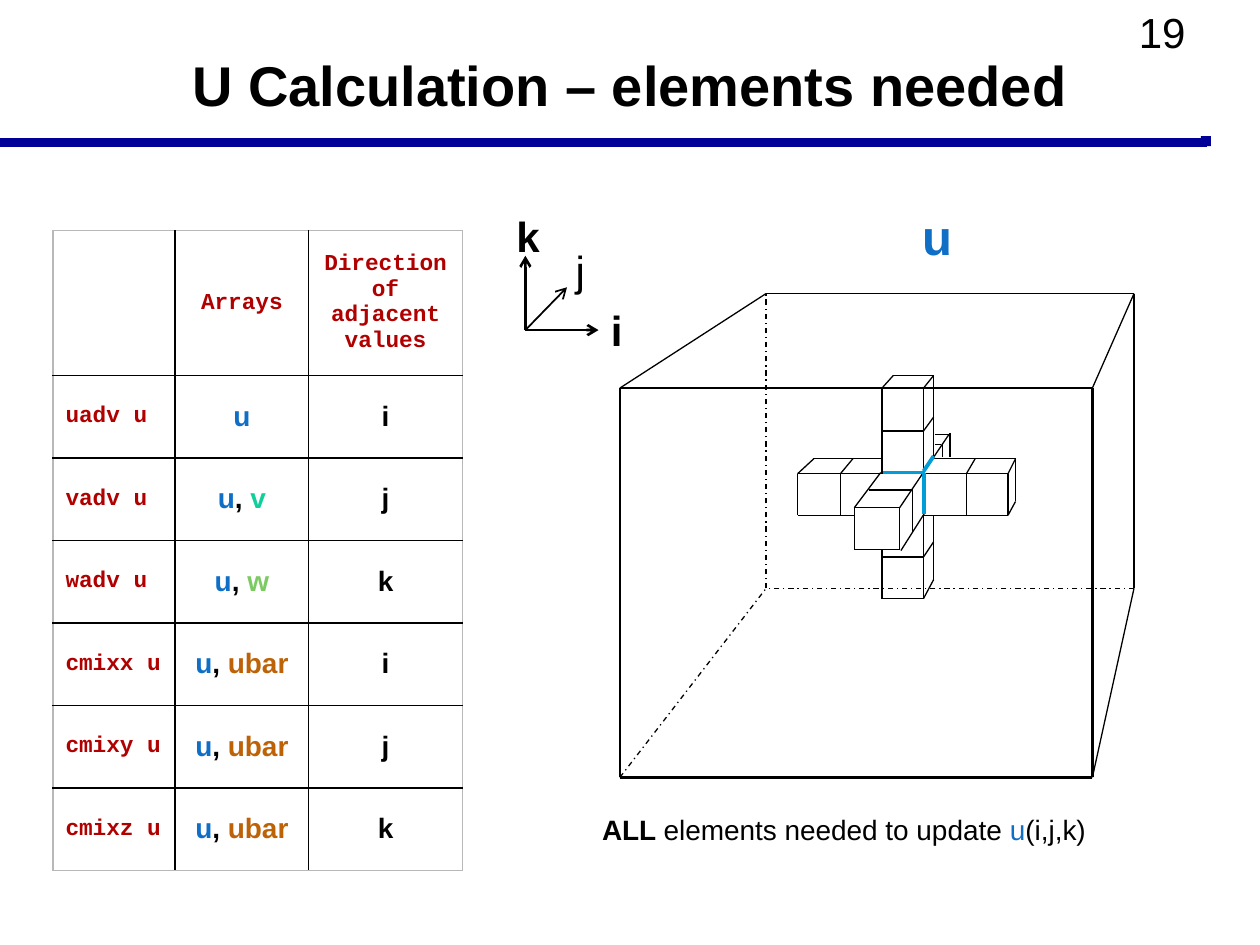
import pptx
import pptx.util
import pptx.dml.color
import pptx.enum.dml
import pptx.enum.shapes
import pptx.enum.text
from lxml import etree
from pptx.oxml.ns import qn

Inches, Pt = pptx.util.Inches, pptx.util.Pt
RGBColor = pptx.dml.color.RGBColor
ALIGN, ANCHOR = pptx.enum.text.PP_ALIGN, pptx.enum.text.MSO_ANCHOR

BLACK = RGBColor(0x00, 0x00, 0x00)
GREY = RGBColor(0xB8, 0xB8, 0xB8)
NAVY = RGBColor(0x00, 0x00, 0x99)
RED = RGBColor(0xB0, 0x00, 0x00)
BLUE = RGBColor(0x0F, 0x6F, 0xC6)
CYAN = RGBColor(0x00, 0x9D, 0xD9)
TEAL = RGBColor(0x10, 0xCF, 0x9B)
GREEN = RGBColor(0x7C, 0xCA, 0x62)
BROWN = RGBColor(0xBD, 0x62, 0x07)

U, COMMA, UBAR = ("u", BLUE), (", ", BLACK), ("ubar", BROWN)
TABLE_ROWS = [
    ("uadv u", [U], "i"),
    ("vadv u", [U, COMMA, ("v", TEAL)], "j"),
    ("wadv u", [U, COMMA, ("w", GREEN)], "k"),
    ("cmixx u", [U, COMMA, UBAR], "i"),
    ("cmixy u", [U, COMMA, UBAR], "j"),
    ("cmixz u", [U, COMMA, UBAR], "k"),
]


def add_line(shapes, left, top, segment, width=0.75, color=BLACK, dashed=False, arrow=False):
    """Draw segment (x1, y1, x2, y2), measured from left, top."""
    x1, y1, x2, y2 = segment
    line = shapes.add_connector(pptx.enum.shapes.MSO_CONNECTOR.STRAIGHT,
                                Inches(left + x1), Inches(top + y1),
                                Inches(left + x2), Inches(top + y2))
    line.line.color.rgb = color
    line.line.width = Pt(width)
    if dashed:
        line.line.dash_style = pptx.enum.dml.MSO_LINE.DASH_DOT
    if arrow:
        etree.SubElement(line.line._get_or_add_ln(), qn("a:tailEnd"), type="arrow")
    etree.SubElement(line._element.spPr, qn("a:effectLst"))


def add_runs(p, runs, size, font="Arial", bold=None):
    p.font.size, p.font.name, p.font.bold = Pt(size), font, bold
    for text, color in runs:
        r = p.add_run()
        r.text = text
        r.font.color.rgb = color


def add_text(shapes, left, top, width, height, runs, size, bold=None):
    box = shapes.add_textbox(Inches(left), Inches(top), Inches(width), Inches(height))
    box.text_frame.word_wrap = True
    p = box.text_frame.paragraphs[0]
    add_runs(p, runs, size, bold=bold)
    return p


def add_heading(s, left, top, width, height):
    """Title with the rule below it and the page number above."""
    title = s.shapes.title
    title.left, title.top = Inches(left + 0.5), Inches(top + 0.08)
    title.width, title.height = Inches(width - 1), Inches(height - 0.08)
    title.text_frame.vertical_anchor = ANCHOR.MIDDLE
    p = title.text_frame.paragraphs[0]
    p.alignment = ALIGN.CENTER
    add_runs(p, [("U Calculation – elements needed", BLACK)], 32, bold=True)

    rule = s.shapes.add_group_shape().shapes
    add_line(rule, left, top, (0, 1.13, 9.58, 1.13), 5, NAVY)
    end = rule.add_shape(pptx.enum.shapes.MSO_SHAPE.RECTANGLE, Inches(left + 9.53),
                         Inches(top + 1.08), Inches(0.08), Inches(0.08))
    end.shadow.inherit = False
    end.fill.solid()
    end.fill.fore_color.rgb = NAVY
    end.line.fill.background()
    add_text(s.shapes, left + 8.94, top, 0.83, 0.4, [("19", BLACK)], 24)


def set_border(cell, side, color):
    ln = etree.SubElement(cell._tc.get_or_add_tcPr(), qn("a:" + side), w=str(Pt(1)))
    fill = etree.SubElement(ln, qn("a:solidFill"))
    etree.SubElement(fill, qn("a:srgbClr"), val=str(color))


def add_arrays_table(s, left, top, width, height):
    n_rows, n_cols = len(TABLE_ROWS) + 1, 3
    table = s.shapes.add_table(n_rows, n_cols, Inches(left), Inches(top),
                               Inches(width), Inches(height)).table
    table.horz_banding = table.first_row = False
    for col, share in zip(table.columns, (0.97, 1.06, 1.22)):
        col.width = Inches(width * share / 3.25)
    header = 1.15
    for i, row in enumerate(table.rows):
        row.height = Inches(header if i == 0 else (height - header) / (n_rows - 1))

    code = (13, "Courier New", True)
    body = (16, "Arial", True)
    grid = [[None, ([("Arrays", RED)], code), ([("Direction of adjacent values", RED)], code)]]
    for name, arrays, direction in TABLE_ROWS:
        grid.append([([(name, RED)], code), (arrays, body), ([(direction, BLACK)], body)])

    for i, row in enumerate(grid):
        for j, content in enumerate(row):
            cell = table.cell(i, j)
            cell.vertical_anchor = ANCHOR.MIDDLE
            outer = {"lnL": j == 0, "lnR": j == n_cols - 1,
                     "lnT": i == 0, "lnB": i == n_rows - 1}
            for side, is_outer in outer.items():
                set_border(cell, side, GREY if is_outer else BLACK)
            cell.fill.background()
            if content:
                runs, style = content
                p = cell.text_frame.paragraphs[0]
                p.alignment = ALIGN.LEFT if j == 0 else ALIGN.CENTER
                add_runs(p, runs, *style)


def add_axes(s, left, top):
    shapes = s.shapes.add_group_shape().shapes
    for dx, dy, width in [(0.58, 0, 1.5), (0.33, -0.34, 1), (0, -0.59, 1.5)]:
        add_line(shapes, left, top, (0.17, 1, 0.17 + dx, 1 + dy), width, arrow=True)
    for name, x, y, bold in [("i", 0.75, 0.75, True), ("j", 0.47, 0.27, None), ("k", 0, 0, True)]:
        add_text(shapes, left + x, top + y, 0.42, 0.51, [(name, BLACK)], 24, bold)


def add_domain(s, left, top, width, height):
    """Wire frame of the whole array, with hidden edges dashed."""
    front = [(0, 0.75), (width - 0.33, 0.75), (width - 0.33, height), (0, height)]
    back = [(1.16, 0), (width, 0), (width, 2.34), (1.16, 2.34)]
    hidden = back[3]
    edges = [(front[i], front[(i + 1) % 4], 1.5) for i in range(4)]
    edges += [(back[i], back[(i + 1) % 4], 0.75) for i in range(4)]
    edges += [(a, b, 0.75) for a, b in zip(front, back)]
    for a, b, weight in edges:
        add_line(s.shapes, left, top, a + b, weight, dashed=hidden in (a, b))


def add_stencil(s, left, top):
    """Cubes along i, j and k around the element being updated."""
    arm_j = [
        (0.45, 1.05, 0.66, 0.77), (0.81, 1.05, 1.2, 0.47), (0.82, 1.39, 1.01, 1.09),
        (1.15, 0.55, 1.15, 0.65), (1.21, 0.46, 1.21, 0.65),
        (1.09, 0.47, 1.21, 0.47), (1.09, 0.55, 1.14, 0.55),
        (0.91, 0.9, 0.91, 1.24), (0.57, 0.91, 0.91, 0.91),
        (0.81, 1.05, 0.81, 1.38), (0.45, 1.05, 0.45, 1.38),
        (0.45, 1.05, 0.81, 1.05), (0.45, 1.38, 0.81, 1.38),
    ]
    arm_i = [(x, 0.78, x, 1.11) for x in (0, 0.34, 1.34, 1.67)]
    arm_i += [(x, 0.78, x + dx, 0.66) for x, dx in
              [(0, 0.13), (0.34, 0.1), (1.34, 0.07), (1.67, 0.06)]]
    arm_i += [
        (0, 0.78, 1.67, 0.78), (0, 1.11, 0.45, 1.11), (1, 1.11, 1.67, 1.11),
        (0.12, 0.66, 0.67, 0.66), (1.08, 0.66, 1.73, 0.66),
        (1.73, 0.66, 1.73, 1), (1.67, 1.11, 1.73, 1),
    ]
    arm_k = [(0.67, y, 1, y) for y in (0.1, 0.44, 1.44, 1.77)]
    arm_k += [(1, y, 1.08, y - dy) for y, dy in
              [(0.1, 0.1), (0.44, 0.11), (1.44, 0.12), (1.77, 0.15)]]
    arm_k += [
        (0.67, 0.1, 0.76, 0), (0.76, 0, 1.08, 0), (1, 0.1, 1, 1.77),
        (0.67, 0.1, 0.67, 0.77), (0.67, 1.38, 0.67, 1.77),
        (1.08, 0, 1.08, 0.65), (1.08, 1.11, 1.08, 1.62),
    ]
    for arm in (arm_j, arm_i, arm_k):
        shapes = s.shapes.add_group_shape().shapes
        for segment in arm:
            add_line(shapes, left, top, segment)
    for segment in [(1.01, 0.77, 0.68, 0.77), (1, 0.77, 1, 1.1), (1.08, 0.64, 1, 0.76)]:
        add_line(s.shapes, left, top, segment, 2.25, CYAN)


def add_labels(s, left, top):
    """Array name above the domain and caption below it."""
    add_text(s.shapes, left + 2.54, top, 0.57, 0.57, [U], 28, True)
    p = add_text(s.shapes, left, top + 4.81, 4.7, 0.37,
                 [("ALL ", BLACK), ("elements needed to update ", BLACK), U, ("(i,j,k)", BLACK)], 16)
    p.runs[0].font.bold = True


def main():
    prs = pptx.Presentation()
    prs.slide_width, prs.slide_height = Inches(10), Inches(7.5)
    s = prs.slides.add_slide(prs.slide_layouts[5])
    add_heading(s, 0, 0, 10, 1.25)
    add_arrays_table(s, 0.42, 1.83, 3.25, 5.08)
    add_domain(s, 4.92, 2.33, 4.08, 3.84)
    add_axes(s, 4, 1.62)
    add_stencil(s, 6.33, 2.98)
    add_labels(s, 4.68, 1.59)
    prs.save("out.pptx")


if __name__ == "__main__":
    main()
